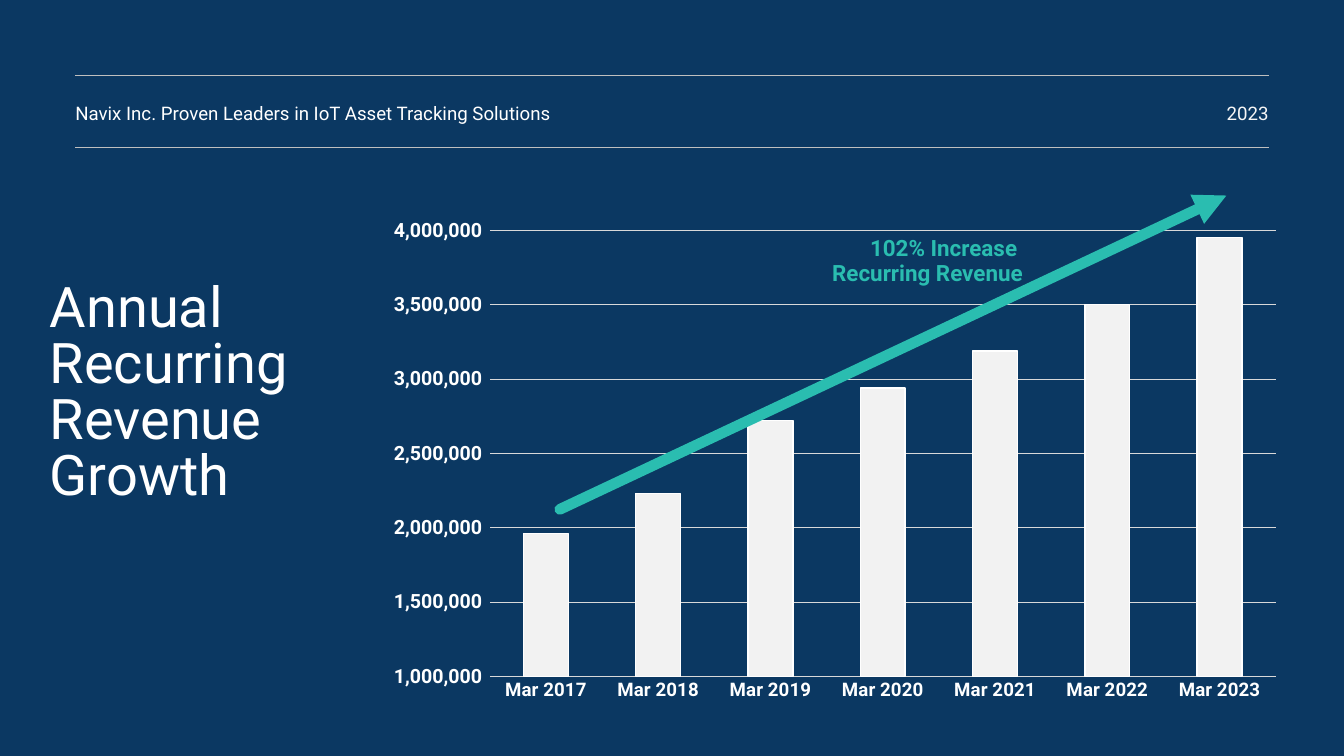
from lxml import etree
from pptx import Presentation
from pptx import util as u
from pptx.chart.data import CategoryChartData
from pptx.dml.color import RGBColor
from pptx.enum import chart as charts, shapes, text
from pptx.oxml import parse_xml
from pptx.oxml.ns import nsdecls, qn

COLORS = {
    "navy": "0B3862", "white": "FFFFFF", "off_white": "F6F6F6", "bar": "F2F2F2",
    "grid": "D9D9D9", "rule": "BFBFBF", "teal": "2ABDB0",
}
REVENUE = {
    "Mar 2017": 1960000, "Mar 2018": 2230000, "Mar 2019": 2720000,
    "Mar 2020": 2940000, "Mar 2021": 3190000, "Mar 2022": 3500000,
    "Mar 2023": 3950000,
}
NUMBER_FORMAT = '_-* #,##0_-;\\-* #,##0_-;_-* "-"??_-;_-@_'
PLOT_AREA = {"x": 0.13, "y": 0.04, "w": 0.85, "h": 0.89}


class SlideBuilder:
    """Draws styled elements on the current slide."""

    def __init__(self, page, font="Roboto"):
        self.page = page
        self.font = font

    def color(self, name):
        return RGBColor.from_string(COLORS[name])

    def background(self, name):
        fill = self.page.background.fill
        fill.solid()
        fill.fore_color.rgb = self.color(name)

    def style_font(self, font, size, color, bold=False):
        font.name = self.font
        font.size = u.Pt(size)
        font.bold = bold
        font.color.rgb = self.color(color)

    def style_line(self, line, color, width):
        line.color.rgb = self.color(color)
        line.width = u.Pt(width)

    def text(self, place, lines, size, spacing, color="white", right=False, bold=False):
        box = self.page.shapes.add_textbox(*map(u.Inches, place))
        frame = box.text_frame
        frame.word_wrap = True
        frame.margin_left = frame.margin_right = 0
        frame.margin_top = frame.margin_bottom = 0
        frame.text = "\n".join(lines)
        for para in frame.paragraphs:
            para.line_spacing = u.Pt(spacing)
            para.alignment = text.PP_ALIGN.RIGHT if right else text.PP_ALIGN.LEFT
            self.style_font(para.font, size, color, bold)

    def line(self, start, end, color, width, arrow=False):
        connector = self.page.shapes.add_connector(
            shapes.MSO_CONNECTOR.STRAIGHT, *map(u.Inches, start + end))
        self.style_line(connector.line, color, width)
        properties = connector._element.spPr
        if arrow:
            outline = properties.find(qn("a:ln"))
            outline.set("cap", "rnd")
            etree.SubElement(outline, qn("a:round"))
            etree.SubElement(outline, qn("a:tailEnd"), type="triangle")
        etree.SubElement(properties, qn("a:effectLst"))

    def axis(self, axis, size):
        axis.major_tick_mark = axis.minor_tick_mark = charts.XL_TICK_MARK.NONE
        self.style_font(axis.tick_labels.font, size, "white", True)

    def column_chart(self, place, values):
        data = CategoryChartData()
        data.categories = list(values)
        data.add_series("Series 1", list(values.values()))
        chart = self.page.shapes.add_chart(
            charts.XL_CHART_TYPE.COLUMN_STACKED, *map(u.Inches, place), data).chart
        chart.has_legend = chart.has_title = False
        self.style_font(chart.font, 20, "white")

        self.axis(chart.category_axis, 20)
        self.style_line(chart.category_axis.format.line, "grid", 0.75)

        value_axis = chart.value_axis
        self.axis(value_axis, 21)
        value_axis.minimum_scale, value_axis.maximum_scale = 1000000, 4000000
        value_axis.major_unit = 500000
        value_axis.format.line.fill.background()
        value_axis.tick_labels.number_format = NUMBER_FORMAT
        value_axis.tick_labels.number_format_is_linked = False
        self.style_line(value_axis.major_gridlines.format.line, "grid", 0.75)

        plot = chart.plots[0]
        plot.gap_width, plot.overlap = 150, 100
        plot.vary_by_categories = False
        bars = plot.series[0].format
        bars.fill.solid()
        bars.fill.fore_color.rgb = self.color("bar")
        self.style_line(bars.line, "white", 1.5)
        self.plot_layout(chart)

    def plot_layout(self, chart):
        area = chart._chartSpace.chart.plotArea
        for old in area.findall(qn("c:layout")):
            area.remove(old)
        sides = "".join(f'<c:{side} val="{size}"/>' for side, size in PLOT_AREA.items())
        area.insert(0, parse_xml(
            f'<c:layout {nsdecls("c")}><c:manualLayout><c:layoutTarget val="inner"/>'
            f'<c:xMode val="edge"/><c:yMode val="edge"/>{sides}'
            '</c:manualLayout></c:layout>'))


def main():
    deck = Presentation()
    deck.slide_width, deck.slide_height = u.Inches(20), u.Inches(11.25)
    builder = SlideBuilder(deck.slides.add_slide(deck.slide_layouts[6]))
    builder.background("navy")

    builder.column_chart((5.5, 3.13, 13.76, 7.46), REVENUE)
    builder.text((0.74, 4.2, 5.94, 3.37), ["Annual Recurring Revenue Growth"], 60, 60)

    builder.text((14.74, 1.46, 4.14, 0.36), ["2023"], 20, 28, "off_white", right=True)
    for top in (1.12, 2.2):
        builder.line((1.12, top), (18.88, top), "rule", 0.75)
    builder.text((1.12, 1.46, 8.29, 0.38),
                 ["Navix Inc. Proven Leaders in IoT Asset Tracking Solutions"], 20, 28)

    builder.line((8.33, 7.58), (18.25, 2.91), "teal", 11.5, arrow=True)
    builder.text((7.08, 3.5, 8.14, 1.11), ["102% Increase ", "Recurring Revenue"],
                 24, 27.3, "teal", right=True, bold=True)

    deck.save("out.pptx")


if __name__ == "__main__":
    main()
